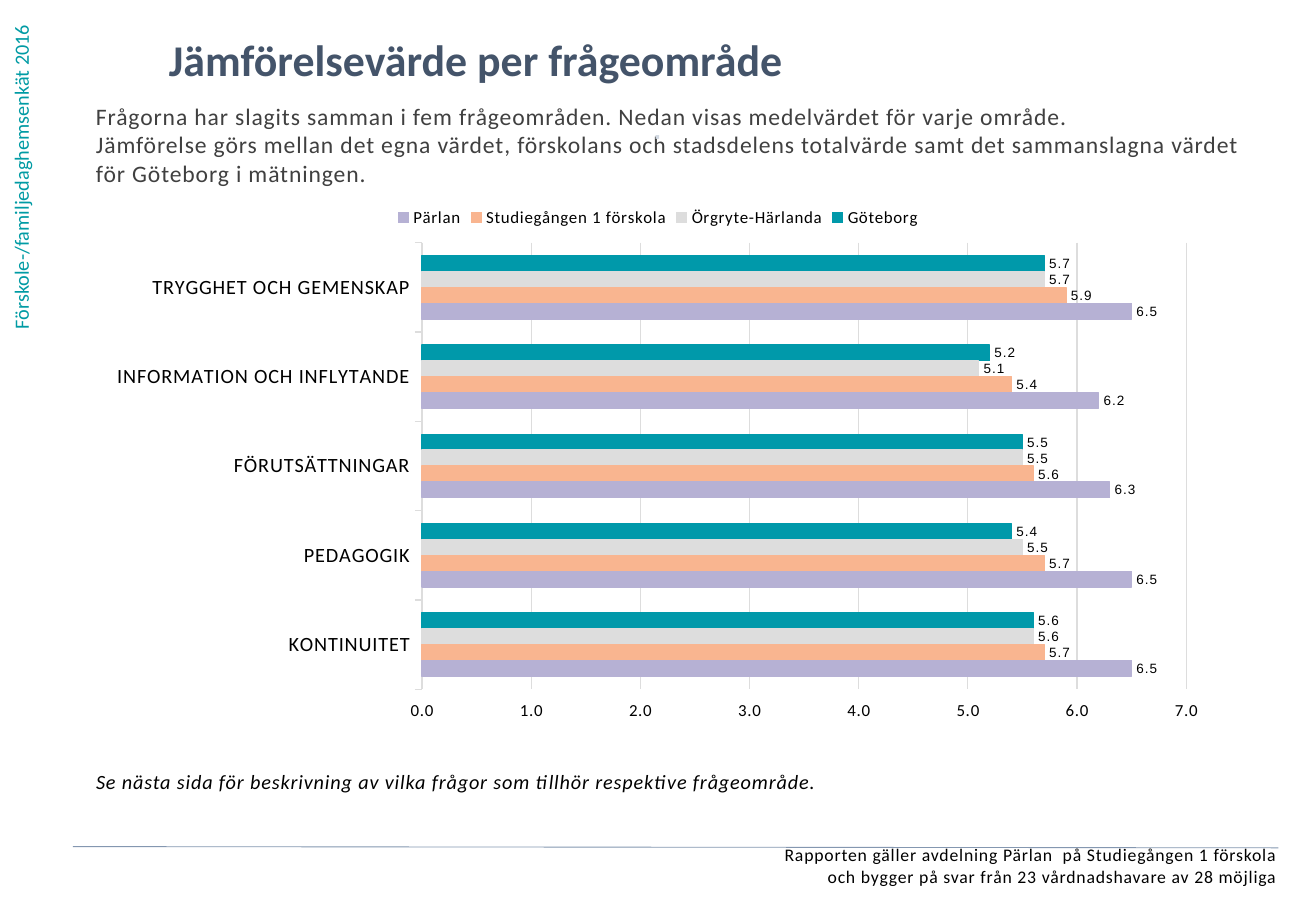
"""Build the slide that compares mean values per question area."""
import pptx
import pptx.chart.data
import pptx.dml.color
import pptx.enum.chart
import pptx.enum.shapes
import pptx.enum.text
import pptx.oxml
import pptx.oxml.ns
import pptx.util
from pptx.util import Inches

FONT = "Calibri"
BLACK = "000000"
GRID = "DDDDDD"
NUMBER_FORMAT = "0.0;0.0"
AREAS = ["TRYGGHET OCH GEMENSKAP", "INFORMATION OCH INFLYTANDE",
         "FÖRUTSÄTTNINGAR", "PEDAGOGIK", "KONTINUITET"]
SERIES = [
    ("Göteborg", "0099AA", [5.7, 5.2, 5.5, 5.4, 5.6]),
    ("Örgryte-Härlanda", "DDDDDD", [5.7, 5.1, 5.5, 5.5, 5.6]),
    ("Studiegången 1 förskola", "F9B590", [5.9, 5.4, 5.6, 5.7, 5.7]),
    ("Pärlan", "B6B1D4", [6.5, 6.2, 6.3, 6.5, 6.5]),
]
INTRO = [
    "Frågorna har slagits samman i fem frågeområden. Nedan visas medelvärdet för varje område.",
    "Jämförelse görs mellan det egna värdet, förskolans och stadsdelens totalvärde "
    "samt det sammanslagna värdet för Göteborg i mätningen.",
]
FOOTER = [
    "Rapporten gäller avdelning Pärlan  på Studiegången 1 förskola",
    "och bygger på svar från 23 vårdnadshavare av 28 möjliga",
]
NOTE = "Se nästa sida för beskrivning av vilka frågor som tillhör respektive frågeområde."


def color(value):
    return pptx.dml.color.RGBColor.from_string(value)


def format_font(font, size, value=BLACK, bold=False, italic=False, name=FONT):
    font.name = name
    font.size = pptx.util.Pt(size)
    font.color.rgb = color(value)
    font.bold = bold
    font.italic = italic


def format_line(line, value, width):
    line.color.rgb = color(value)
    line.width = pptx.util.Pt(width)


def fill_text(shape, lines, size, value=BLACK, align="LEFT", spacing=50, **style):
    frame = shape.text_frame
    frame.word_wrap = True
    frame.auto_size = pptx.enum.text.MSO_AUTO_SIZE.NONE
    frame.vertical_anchor = pptx.enum.text.MSO_ANCHOR.TOP
    frame.margin_left = frame.margin_right = 0
    frame.margin_top = frame.margin_bottom = 0
    for index, line in enumerate(lines):
        paragraph = frame.add_paragraph() if index else frame.paragraphs[0]
        paragraph.alignment = getattr(pptx.enum.text.PP_ALIGN, align)
        paragraph.line_spacing = 1.0
        paragraph.space_before = pptx.util.Pt(0)
        run = paragraph.add_run()
        run.text = line
        format_font(run.font, size, value, **style)
        run._r.get_or_add_rPr().set("spc", str(spacing))


def add_text(slide, left, top, width, height, lines, size, **style):
    box = slide.shapes.add_textbox(Inches(left), Inches(top), Inches(width), Inches(height))
    fill_text(box, lines, size, **style)
    return box


def add_title(slide, text):
    title = slide.shapes.title
    title.left, title.top = Inches(1.39), Inches(0.27)
    title.width, title.height = Inches(8.34), Inches(0.57)
    fill_text(title, [text], 26, value="44546A", bold=True, spacing=0)


def add_side_label(slide, text):
    label = add_text(slide, 0, 0, 0.38, 2.81, [text], 12, value="009BA4", spacing=0)
    label.text_frame.margin_left = Inches(0.07)
    label.text_frame.margin_bottom = Inches(0.1)
    label.text_frame._txBody.bodyPr.set("vert", "vert270")


def add_rule(slide):
    rule = slide.shapes.add_connector(
        pptx.enum.shapes.MSO_CONNECTOR.STRAIGHT,
        Inches(0.6), Inches(6.97), Inches(10.52), Inches(6.98))
    format_line(rule.line, "8497B0", 0.5)
    properties = rule._element.spPr
    properties.append(properties.makeelement(pptx.oxml.ns.qn("a:effectLst"), {}))


def set_plot_layout(chart, x, y, w, h):
    sizes = "".join(f'<c:{key} val="{number}"/>' for key, number in
                    (("x", x), ("y", y), ("w", w), ("h", h)))
    layout = pptx.oxml.parse_xml(
        f'<c:layout {pptx.oxml.ns.nsdecls("c")}><c:manualLayout>'
        '<c:layoutTarget val="inner"/><c:xMode val="edge"/><c:yMode val="edge"/>'
        f'{sizes}</c:manualLayout></c:layout>')
    plot_area = chart.element.find(".//" + pptx.oxml.ns.qn("c:plotArea"))
    for old in plot_area.findall(pptx.oxml.ns.qn("c:layout")):
        plot_area.remove(old)
    plot_area.insert(0, layout)


def format_axes(chart):
    areas, values = chart.category_axis, chart.value_axis
    areas.reverse_order = True
    format_line(areas.format.line, GRID, 0.75)
    format_font(areas.tick_labels.font, 12)
    values.minimum_scale, values.maximum_scale, values.major_unit = 0, 7, 1
    values.has_major_gridlines = True
    format_line(values.major_gridlines.format.line, GRID, 0.75)
    values.format.line.fill.background()
    values.tick_label_position = pptx.enum.chart.XL_TICK_LABEL_POSITION.HIGH
    values.tick_labels.number_format = NUMBER_FORMAT
    values.tick_labels.number_format_is_linked = False
    format_font(values.tick_labels.font, 10)
    for axis in (areas, values):
        axis.major_tick_mark = pptx.enum.chart.XL_TICK_MARK.OUTSIDE


def format_series(series, value):
    series.format.fill.solid()
    series.format.fill.fore_color.rgb = color(value)
    format_line(series.format.line, value, 0.75)
    labels = series.data_labels
    labels.show_value = True
    labels.number_format = NUMBER_FORMAT
    labels.number_format_is_linked = False
    labels.position = pptx.enum.chart.XL_LABEL_POSITION.OUTSIDE_END
    format_font(labels.font, 8, name="Arial")


def add_comparison_chart(slide):
    data = pptx.chart.data.CategoryChartData(number_format="0.0")
    data.categories = AREAS
    for name, _, values in SERIES:
        data.add_series(name, values)
    chart = slide.shapes.add_chart(
        pptx.enum.chart.XL_CHART_TYPE.BAR_CLUSTERED,
        Inches(0.79), Inches(1.6), Inches(9.25), Inches(4.43), data).chart
    format_font(chart.font, 10)
    chart.has_title = False
    chart.has_legend = True
    chart.legend.position = pptx.enum.chart.XL_LEGEND_POSITION.TOP
    chart.legend.include_in_layout = False
    format_font(chart.legend.font, 10)
    plot = chart.plots[0]
    plot.gap_width, plot.overlap = 162, 0
    plot.vary_by_categories = False
    for series, (_, value, _) in zip(plot.series, SERIES):
        format_series(series, value)
    format_axes(chart)
    set_plot_layout(chart, 0.29, 0.09, 0.68, 0.83)
    for properties in chart.element.iter(pptx.oxml.ns.qn("a:defRPr")):
        properties.set("spc", "50")


def main():
    presentation = pptx.Presentation()
    presentation.slide_width = Inches(10.83)
    presentation.slide_height = Inches(7.5)
    slide = presentation.slides.add_slide(presentation.slide_layouts.get_by_name("Title Only"))
    add_side_label(slide, "Förskole-/familjedaghemsenkät 2016")
    add_title(slide, "Jämförelsevärde per frågeområde")
    add_text(slide, 0.79, 0.84, 9.46, 0.76, INTRO, 14, value="404040")
    add_text(slide, 0.12, 6.95, 10.39, 0.43, FOOTER, 10.5, align="RIGHT")
    add_text(slide, 3.87, 1.02, 3.08, 0.39, ["⋅"], 12, value="D2D9E2", align="CENTER", bold=True)
    add_text(slide, 0.79, 6.33, 9.25, 0.3, [NOTE], 12, italic=True)
    add_comparison_chart(slide)
    add_rule(slide)
    presentation.save("out.pptx")


if __name__ == "__main__":
    main()
